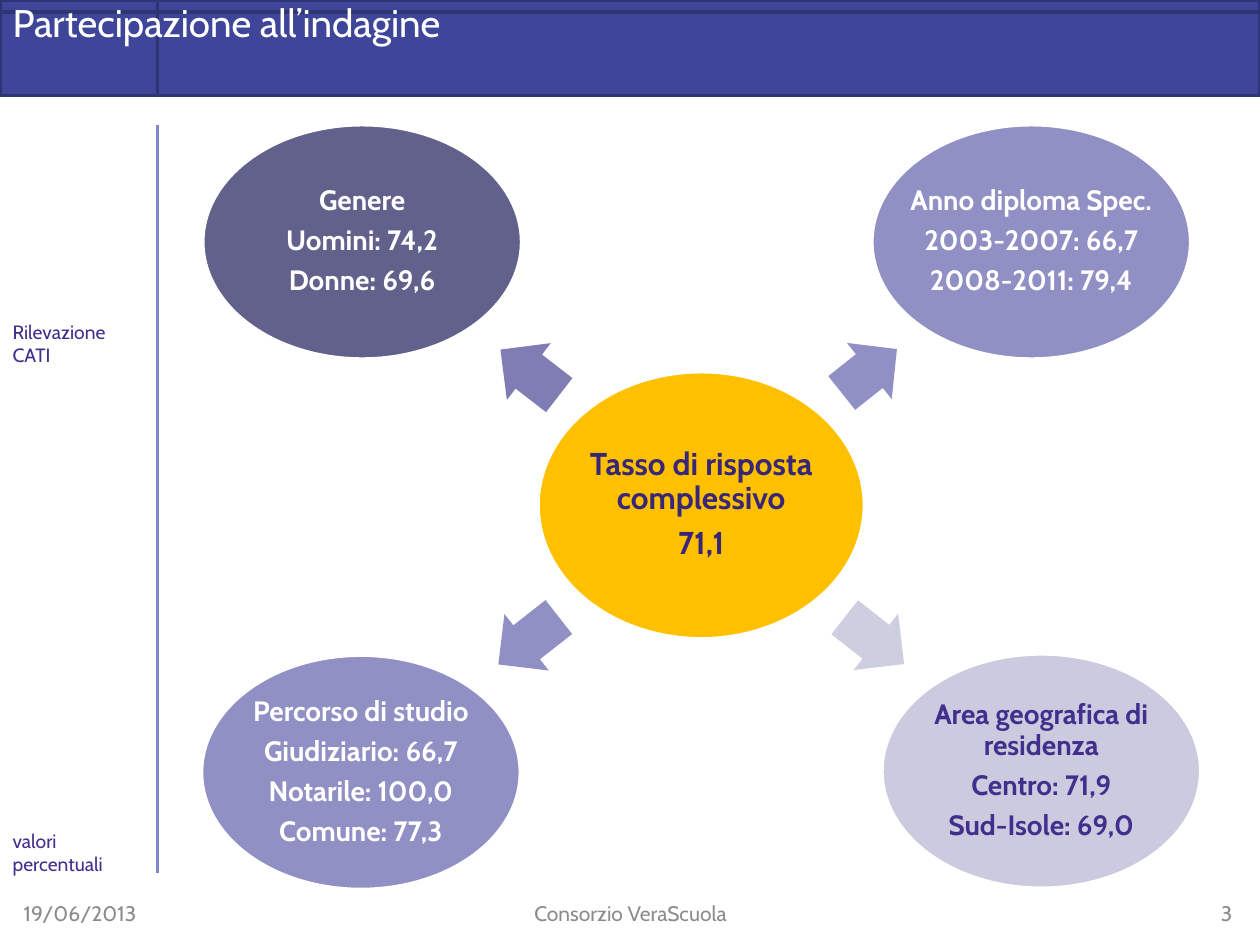
from pptx import Presentation
from pptx.dml.color import RGBColor
from pptx.enum.shapes import MSO_CONNECTOR, MSO_SHAPE
from pptx.enum.text import MSO_ANCHOR, MSO_AUTO_SIZE, PP_ALIGN
from pptx.oxml.ns import qn
from pptx.util import Inches, Pt
from lxml.etree import SubElement


class Theme:
    font = "Cabin"
    bar, edge, rule = "3F469A", "2F3472", "8288CC"
    white, gold, grey = "FFFFFF", "FFC000", "8C8C8C"
    ink, deep = "422E8D", "382777"
    plum, lilac, pale = "62618B", "9190C4", "CBCADF"
    violet, mist = "7F7DB4", "CECEE1"
    head, core, node, foot, note = 22, 18, 16, 12, 11


def paint(shape, fill, line=None):
    shape.shadow.inherit = False
    shape.fill.solid()
    shape.fill.fore_color.rgb = RGBColor.from_string(fill)
    if line:
        shape.line.color.rgb = RGBColor.from_string(line)
        shape.line.width = Pt(2)
    else:
        shape.line.fill.background()


def write(shape, text, size, color, align=PP_ALIGN.LEFT,
          anchor=MSO_ANCHOR.MIDDLE, bold=False):
    frame = shape.text_frame
    frame.text = text
    frame.word_wrap = True
    frame.auto_size = MSO_AUTO_SIZE.NONE
    frame.vertical_anchor = anchor
    for para in frame.paragraphs:
        para.alignment = align
        para.space_before = Pt(0)
        for run in para.runs:
            run.font.name = Theme.font
            run.font.size = Pt(size)
            run.font.bold = bold
            run.font.color.rgb = RGBColor.from_string(color)


deck = Presentation()
deck.slide_width, deck.slide_height = Inches(10), Inches(7.5)
slide = deck.slides.add_slide(deck.slide_layouts[4])
shapes = slide.shapes
title, upper, spare, lower, extra = slide.placeholders
for hold in (spare, extra):
    shapes.element.remove(hold.element)

# Side rule
rule = shapes.add_connector(MSO_CONNECTOR.STRAIGHT, Inches(1.25), Inches(0.99),
                            Inches(1.25), Inches(6.93))
rule.line.color.rgb = RGBColor.from_string(Theme.rule)
rule.line.width = Pt(1.5)
SubElement(rule.element.spPr, qn("a:effectLst"))

# Title bar, with the title in front of it
bar = shapes.add_shape(MSO_SHAPE.FLOWCHART_INTERNAL_STORAGE, 0, 0,
                       Inches(10), Inches(0.76))
paint(bar, Theme.bar, Theme.edge)
shapes.element.append(title.element)
title.left, title.top, title.width, title.height = 0, 0, Inches(10), Inches(0.76)
write(title, "Partecipazione all’indagine", Theme.head, Theme.white,
      anchor=MSO_ANCHOR.TOP)
title.text_frame.paragraphs[0].line_spacing = Pt(22)

# Side notes
for hold, text, top, high, anchor in (
        (upper, "Rilevazione CATI", 2.49, 0.87, MSO_ANCHOR.TOP),
        (lower, "valori percentuali", 6.61, 0.39, MSO_ANCHOR.BOTTOM)):
    hold.left, hold.top = 0, Inches(top)
    hold.width, hold.height = Inches(1.22), Inches(high)
    write(hold, text, Theme.note, Theme.ink, anchor=anchor)

# Arrows from the centre: left, top, width, turn, fill
for left, top, wide, turn, fill in (
        (3.91, 2.67, 0.59, 217.7, Theme.violet),
        (6.62, 2.66, 0.56, 321.5, Theme.lilac),
        (6.64, 4.8, 0.6, 38.2, Theme.mist),
        (3.89, 4.8, 0.61, 141.9, Theme.lilac)):
    arrow = shapes.add_shape(MSO_SHAPE.RIGHT_ARROW, Inches(left), Inches(top),
                             Inches(wide), Inches(0.57))
    arrow.adjustments[0], arrow.adjustments[1] = 0.6, 0.5
    arrow.rotation = turn
    paint(arrow, fill)

# Ellipses: place, fill, text size and colour, wrap, lines
big, small = (2.59, 2.12), (2.53, 1.86)
for left, top, (wide, high), fill, size, color, wrap, lines in (
        (4.27, 2.95, big, Theme.gold, Theme.core, Theme.deep, True,
         ("Tasso di risposta complessivo", "71,1")),
        (1.61, 0.99, small, Theme.plum, Theme.node, Theme.white, True,
         ("Genere", "Uomini: 74,2", "Donne: 69,6")),
        (6.92, 0.99, small, Theme.lilac, Theme.node, Theme.white, False,
         ("Anno diploma Spec.", "2003-2007: 66,7", "2008-2011: 79,4")),
        (7, 5.19, small, Theme.pale, Theme.node, Theme.ink, True,
         ("Area geografica di residenza", "Centro: 71,9", "Sud-Isole: 69,0")),
        (1.6, 5.2, small, Theme.lilac, Theme.node, Theme.white, True,
         ("Percorso di studio", "Giudiziario: 66,7", "Notarile: 100,0",
          "Comune: 77,3"))):
    oval = shapes.add_shape(MSO_SHAPE.OVAL, Inches(left), Inches(top),
                            Inches(wide), Inches(high))
    paint(oval, fill, Theme.white)
    write(oval, "\n".join(lines), size, color, PP_ALIGN.CENTER, bold=True)
    frame = oval.text_frame
    frame.word_wrap = wrap
    frame.margin_left = frame.margin_right = 0
    frame.margin_top = frame.margin_bottom = Inches(0.02)
    for para in frame.paragraphs:
        para.line_spacing = 0.9
        para.space_after = Pt(size * 0.35)

# Footer
for left, wide, text, align in (
        (0.09, 2.33, "19/06/2013", PP_ALIGN.LEFT),
        (7.55, 2.33, "3", PP_ALIGN.RIGHT),
        (3.42, 3.17, "Consorzio VeraScuola", PP_ALIGN.CENTER)):
    box = shapes.add_textbox(Inches(left), Inches(7.05), Inches(wide), Inches(0.4))
    write(box, text, Theme.foot, Theme.grey, align)

deck.save("out.pptx")
